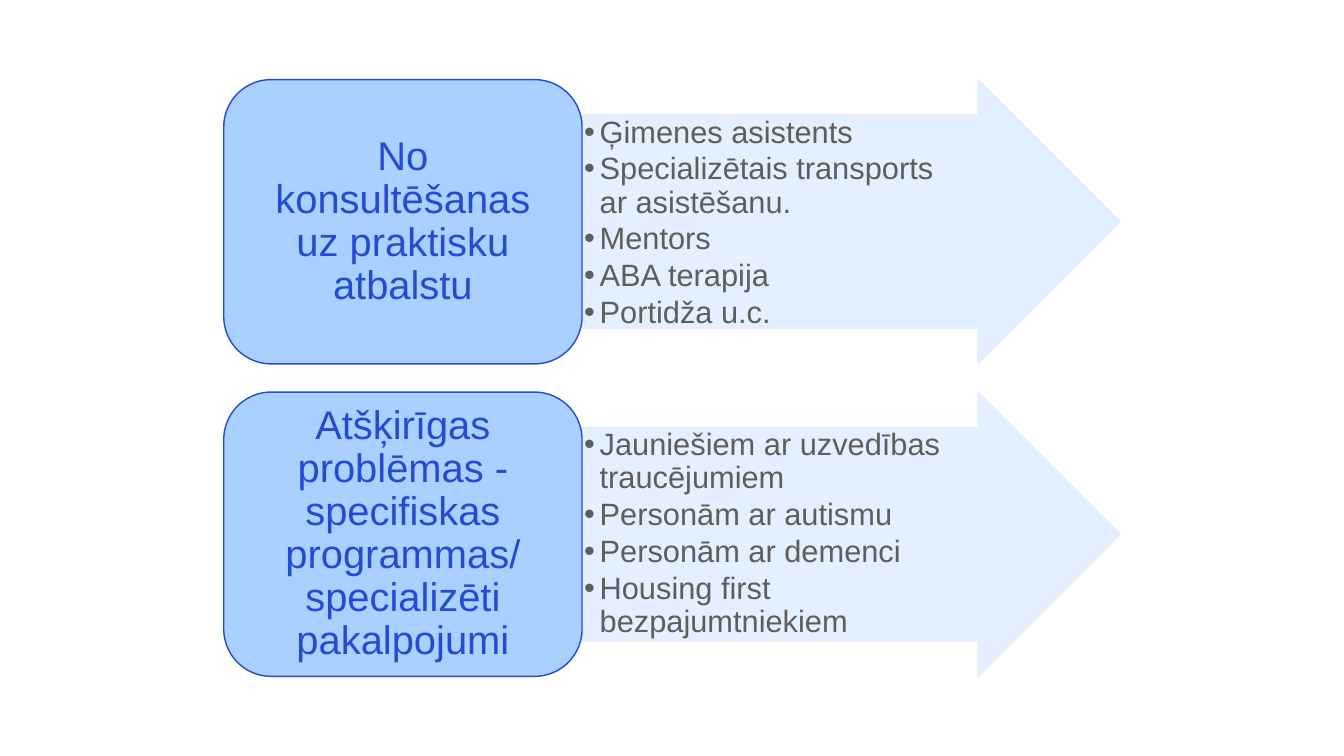
from lxml.etree import SubElement
from pptx import Presentation
from pptx.dml.color import RGBColor
from pptx.enum.shapes import MSO_SHAPE
from pptx.enum.text import MSO_ANCHOR, PP_ALIGN
from pptx.oxml.ns import qn
from pptx.util import Inches, Pt

PALE, SKY, BLUE, GREY = "E2EEFF", "AAD0FF", "244CD3", "5E5E5E"
ROW_HEIGHT = 5.64
ROW_TOP, ROW_PITCH = 1.58, 6.2
LABEL_LEFT, LABEL_WIDTH = 4.44, 7.11
ARROW_LEFT, ARROW_WIDTH = 11.56, 10.67

ROWS = [
    ("No konsultēšanas uz praktisku atbalstu",
     ["Ģimenes asistents", "Specializētais transports ar asistēšanu.",
      "Mentors", "ABA terapija", "Portidža u.c."]),
    ("Atšķirīgas problēmas - specifiskas programmas/ specializēti pakalpojumi",
     ["Jauniešiem ar uzvedības traucējumiem", "Personām ar autismu",
      "Personām ar demenci", "Housing first bezpajumtniekiem"]),
]


def color(value):
    return RGBColor.from_string(value)


def add_panel(page, kind, left, top, width, fill, line):
    shape = page.shapes.add_shape(
        kind, Inches(left), Inches(top), Inches(width), Inches(ROW_HEIGHT))
    shape.shadow.inherit = False
    shape.fill.solid()
    shape.fill.fore_color.rgb = color(fill)
    shape.line.color.rgb = color(line)
    shape.line.width = Pt(2)
    return shape


def set_opacity(shape, percent):
    """Apply one opacity to both the fill and the outline."""
    for item in shape.element.spPr.iter(qn("a:srgbClr")):
        SubElement(item, qn("a:alpha"), val=str(percent * 1000))


def set_insets(frame, left, top, right, bottom):
    frame.margin_left, frame.margin_top = Inches(left), Inches(top)
    frame.margin_right, frame.margin_bottom = Inches(right), Inches(bottom)


def format_text(frame, size, font_color, alignment, space_after):
    frame.word_wrap = True
    for paragraph in frame.paragraphs:
        paragraph.alignment = alignment
        paragraph.line_spacing = 0.9
        paragraph.space_after = Pt(space_after)
        for span in paragraph.runs:
            span.font.name = "Arial"
            span.font.size = Pt(size)
            span.font.color.rgb = color(font_color)


def add_bullet(paragraph, indent):
    properties = paragraph._p.get_or_add_pPr()
    properties.set("marL", str(Inches(indent)))
    properties.set("indent", str(-Inches(indent)))
    SubElement(properties, qn("a:buFont"), typeface="Arial")
    SubElement(properties, qn("a:buChar"), char="•")


def add_arrow(page, top, items):
    arrow = add_panel(page, MSO_SHAPE.RIGHT_ARROW, ARROW_LEFT, top,
                      ARROW_WIDTH, PALE, PALE)
    arrow.adjustments[0], arrow.adjustments[1] = 0.75, 0.5
    set_opacity(arrow, 90)
    frame = arrow.text_frame
    frame.text = "\n".join(items)
    frame.vertical_anchor = MSO_ANCHOR.TOP
    # The wide right inset keeps the text out of the arrowhead.
    set_insets(frame, 0.03, 0.03, 1.44, 0.03)
    format_text(frame, 44, GREY, PP_ALIGN.LEFT, 5)
    for paragraph in frame.paragraphs:
        add_bullet(paragraph, 0.31)


def add_label(page, top, text):
    label = add_panel(page, MSO_SHAPE.ROUNDED_RECTANGLE, LABEL_LEFT, top,
                      LABEL_WIDTH, SKY, BLUE)
    frame = label.text_frame
    frame.text = text
    frame.vertical_anchor = MSO_ANCHOR.MIDDLE
    set_insets(frame, 0.24, 0.12, 0.24, 0.12)
    format_text(frame, 57, BLUE, PP_ALIGN.CENTER, 0)


def main():
    deck = Presentation()
    deck.slide_width, deck.slide_height = Inches(26.67), Inches(15)
    page = deck.slides.add_slide(deck.slide_layouts[6])
    for index, (heading, items) in enumerate(ROWS):
        top = ROW_TOP + index * ROW_PITCH
        add_arrow(page, top, items)
        add_label(page, top, heading)
    deck.save("out.pptx")


if __name__ == "__main__":
    main()
